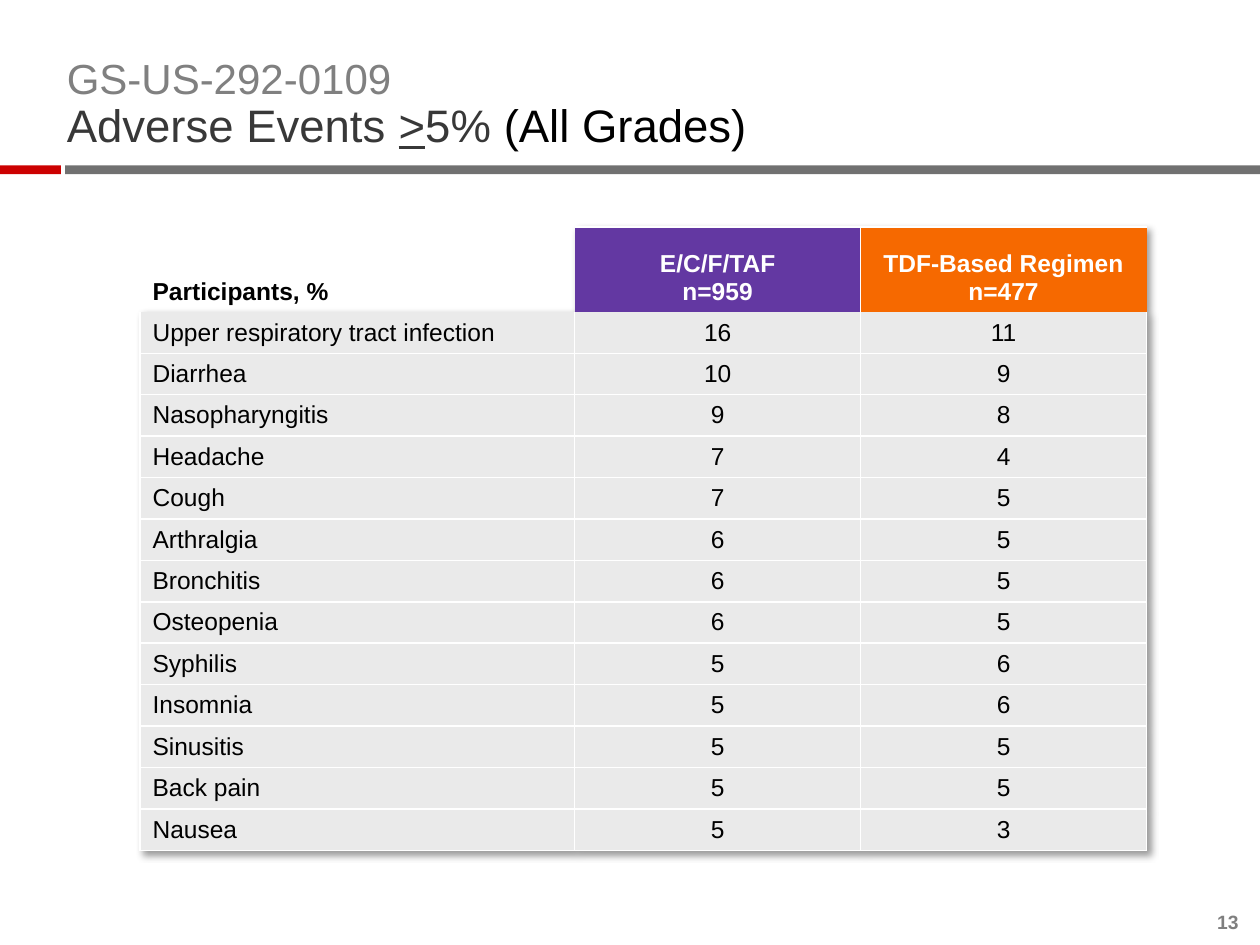
import pptx
import pptx.dml.color
import pptx.enum.shapes
import pptx.enum.text
import pptx.oxml
import pptx.oxml.ns
import pptx.util

Pt = pptx.util.Pt
ALIGN = pptx.enum.text.PP_ALIGN
ANCHOR = pptx.enum.text.MSO_ANCHOR

FONT = "Arial"
COLORS = {
    "white": "FFFFFF", "black": "000000", "red": "CC0000", "bar": "717171",
    "study": "808080", "title": "383838", "number": "7F7F7F",
    "purple": "6338A2", "orange": "F66900", "row": "EAEAEA",
}
PLAIN_TABLE_STYLE = "{2D5ABB26-0587-4C30-8999-92F81FD0307C}"
HEADER_HEIGHT, ROW_HEIGHT = 48.5, 23.68
COLUMN_WIDTHS = (248.4, 163.4, 163.4)

# Paragraphs, alignment, text colour and fill of each header cell
HEADERS = [
    (["Participants, %"], ALIGN.LEFT, "black", None),
    (["E/C/F/TAF\nn=959"], ALIGN.CENTER, "white", "purple"),
    (["TDF-Based Regimen", "n=477"], ALIGN.CENTER, "white", "orange"),
]
ADVERSE_EVENTS = [
    ("Upper respiratory tract infection", 16, 11),
    ("Diarrhea", 10, 9),
    ("Nasopharyngitis", 9, 8),
    ("Headache", 7, 4),
    ("Cough", 7, 5),
    ("Arthralgia", 6, 5),
    ("Bronchitis", 6, 5),
    ("Osteopenia", 6, 5),
    ("Syphilis", 5, 6),
    ("Insomnia", 5, 6),
    ("Sinusitis", 5, 5),
    ("Back pain", 5, 5),
    ("Nausea", 5, 3),
]


def rgb(name):
    return pptx.dml.color.RGBColor.from_string(COLORS[name])


def add_run(paragraph, text, size, color, bold=False, underline=False):
    run = paragraph.add_run()
    run.text = text
    font = run.font
    font.name, font.size = FONT, Pt(size)
    font.bold, font.underline = bold, underline
    font.color.rgb = rgb(color)


def add_bar(slide, left, width, color):
    bar = slide.shapes.add_shape(
        pptx.enum.shapes.MSO_SHAPE.RECTANGLE, Pt(left), Pt(94.5), Pt(width), Pt(5))
    bar.shadow.inherit = False
    bar.fill.solid()
    bar.fill.fore_color.rgb = rgb(color)
    bar.line.fill.background()


def add_text_box(slide, left, top, width, height):
    """Add a bottom-anchored box without insets and return its first paragraph."""
    box = slide.shapes.add_textbox(Pt(left), Pt(top), Pt(width), Pt(height))
    frame = box.text_frame
    frame.word_wrap = True
    frame.vertical_anchor = ANCHOR.BOTTOM
    frame.margin_left = frame.margin_right = 0
    frame.margin_top = frame.margin_bottom = 0
    return frame.paragraphs[0]


def add_title(slide):
    paragraph = add_text_box(slide, 38.2, 33.8, 648, 53.3)
    paragraph.line_spacing = 0.9
    add_run(paragraph, "GS-US-292-0109 ", 24, "study")
    paragraph.add_line_break()
    add_run(paragraph, "Adverse Events ", 26, "title")
    add_run(paragraph, ">", 26, "title", underline=True)
    add_run(paragraph, "5% ", 26, "title")
    add_run(paragraph, "(All Grades)", 26, "black")


def set_borders(cell, widths):
    """Draw white borders; widths maps the sides L, R, T, B to points."""
    properties = cell._tc.get_or_add_tcPr()
    sides = [side for side in "LRTB" if side in widths]
    for position, side in enumerate(sides):
        properties.insert(position, pptx.oxml.parse_xml(
            f'<a:ln{side} {pptx.oxml.ns.nsdecls("a")} w="{Pt(widths[side])}">'
            f'<a:solidFill><a:srgbClr val="{COLORS["white"]}"/></a:solidFill>'
            f'</a:ln{side}>'))


def fill_cell(cell, paragraphs, align, color, fill, bold=False):
    frame = cell.text_frame
    for index, text in enumerate(paragraphs):
        paragraph = frame.add_paragraph() if index else frame.paragraphs[0]
        paragraph.alignment = align
        for line_index, line in enumerate(text.split("\n")):
            if line_index:
                paragraph.add_line_break()
            add_run(paragraph, line, 14, color, bold)
    if fill:
        cell.fill.solid()
        cell.fill.fore_color.rgb = rgb(fill)
    else:
        cell.fill.background()


def style_table(table):
    """Remove banding and cast a soft shadow to the lower right."""
    table.first_row = table.horz_banding = False
    properties = table._tbl.tblPr
    properties.find(pptx.oxml.ns.qn("a:tableStyleId")).text = PLAIN_TABLE_STYLE
    properties.insert(0, pptx.oxml.parse_xml(
        f'<a:effectLst {pptx.oxml.ns.nsdecls("a")}>'
        f'<a:outerShdw blurRad="{Pt(4)}" dist="{Pt(3)}" dir="2700000" algn="tl" rotWithShape="0">'
        f'<a:srgbClr val="{COLORS["black"]}"><a:alpha val="40000"/></a:srgbClr>'
        '</a:outerShdw></a:effectLst>'))


def add_event_table(slide):
    row_count = len(ADVERSE_EVENTS) + 1
    height = HEADER_HEIGHT + ROW_HEIGHT * len(ADVERSE_EVENTS)
    table = slide.shapes.add_table(
        row_count, len(COLUMN_WIDTHS), Pt(80), Pt(129.7),
        Pt(sum(COLUMN_WIDTHS)), Pt(height)).table
    style_table(table)
    for column, width in zip(table.columns, COLUMN_WIDTHS):
        column.width = Pt(width)
    for index, row in enumerate(table.rows):
        row.height = Pt(ROW_HEIGHT if index else HEADER_HEIGHT)

    for column, header in enumerate(HEADERS):
        cell = table.cell(0, column)
        cell.vertical_anchor = ANCHOR.BOTTOM
        fill_cell(cell, *header, bold=True)
    set_borders(table.cell(0, 1), {"T": 0.75, "R": 0.75})
    set_borders(table.cell(0, 2), {"T": 0.75, "L": 0.75})

    for row, event in enumerate(ADVERSE_EVENTS, start=1):
        for column, value in enumerate(event):
            cell = table.cell(row, column)
            cell.vertical_anchor = ANCHOR.MIDDLE
            cell.margin_left = Pt(0 if column else 7.2)
            cell.margin_right = cell.margin_top = cell.margin_bottom = 0
            align = ALIGN.CENTER if column else ALIGN.LEFT
            fill_cell(cell, [str(value)], align, "black", "row")
            borders = {"L": 1 if column else 0.75, "R": 1, "B": 1}
            if row > 1:
                borders["T"] = 1
            set_borders(cell, borders)


def add_page_number(slide):
    paragraph = add_text_box(slide, 688.3, 520.6, 19.5, 13)
    paragraph.alignment = ALIGN.RIGHT
    add_run(paragraph, "13", 11, "number", bold=True)


def main():
    presentation = pptx.Presentation()
    presentation.slide_width, presentation.slide_height = Pt(720), Pt(540)
    slide = presentation.slides.add_slide(presentation.slide_layouts[6])
    add_bar(slide, 37.2, 682.8, "bar")
    add_bar(slide, 0, 34.8, "red")
    add_title(slide)
    add_event_table(slide)
    add_page_number(slide)
    presentation.save("out.pptx")


if __name__ == "__main__":
    main()
